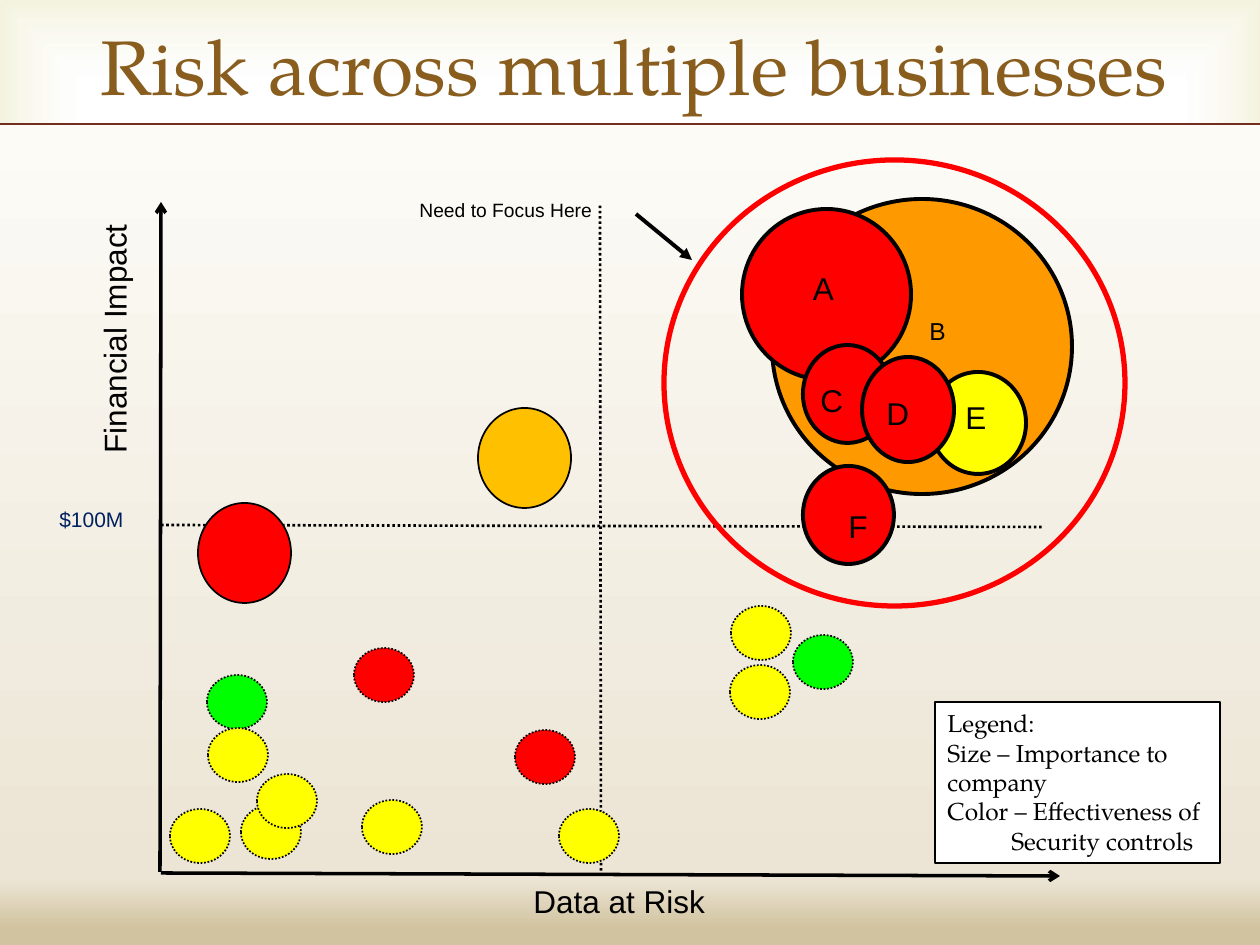
from lxml import etree
from pptx import Presentation
from pptx.dml.color import RGBColor
from pptx.enum.dml import MSO_LINE
from pptx.enum.shapes import MSO_CONNECTOR, MSO_SHAPE
from pptx.enum.text import MSO_ANCHOR, PP_ALIGN
from pptx.oxml import parse_xml
from pptx.oxml.ns import nsdecls, qn
from pptx.util import Pt

STRAIGHT = MSO_CONNECTOR.STRAIGHT
OVAL, RECTANGLE = MSO_SHAPE.OVAL, MSO_SHAPE.RECTANGLE
DOTTED = MSO_LINE.ROUND_DOT
LEFT, CENTER = PP_ALIGN.LEFT, PP_ALIGN.CENTER
TOP, MIDDLE = MSO_ANCHOR.TOP, MSO_ANCHOR.MIDDLE

EMU_PER_PX = 914400 / 126
SERIF, SANS = "TeX Gyre Pagella", "Arial"

BLACK = RGBColor(0x00, 0x00, 0x00)
WHITE = RGBColor(0xFF, 0xFF, 0xFF)
RED = RGBColor(0xFF, 0x00, 0x00)
ORANGE = RGBColor(0xFF, 0x99, 0x00)
AMBER = RGBColor(0xFF, 0xC0, 0x00)
YELLOW = RGBColor(0xFF, 0xFF, 0x00)
GREEN = RGBColor(0x00, 0xFF, 0x00)
NAVY = RGBColor(0x00, 0x20, 0x60)
BROWN = RGBColor(0x89, 0x5D, 0x1D)
RUST = RGBColor(0x74, 0x2E, 0x1F)
CREAM = RGBColor(0xFC, 0xFB, 0xF6)
SAND = RGBColor(0xEC, 0xE5, 0xD5)
TAN = RGBColor(0xD1, 0xC3, 0x9F)
OLIVE = RGBColor(0xD1, 0xCA, 0x75)

# Left, top, width, height, colour; from back to front
FOCUS_BUBBLES = [
    (772, 199, 300, 295, ORANGE),
    (930, 372, 96, 102, YELLOW),
    (742, 209, 169, 171, RED),
    (803, 345, 89, 98, RED),
    (862, 357, 92, 105, RED),
    (803, 466, 91, 98, RED),
]
MEDIUM_SIZE, SMALL_SIZE = (93, 100), (60, 54)
MEDIUM_BUBBLES = [(198, 503, RED), (478, 408, AMBER)]
SMALL_BUBBLES = [
    (559, 809, YELLOW), (515, 730, RED), (170, 809, YELLOW),
    (207, 675, GREEN), (354, 648, RED), (241, 805, YELLOW),
    (208, 728, YELLOW), (257, 774, YELLOW), (793, 635, GREEN),
    (730, 665, YELLOW), (731, 606, YELLOW), (362, 800, YELLOW),
]
# Text, left, top, width, height, size, alignment
BUBBLE_LABELS = [
    ("A", 753, 263, 141, 50, 18, CENTER),
    ("B", 917, 310, 193, 43, 14, LEFT),
    ("C", 808, 375, 66, 50, 18, LEFT),
    ("D", 874, 388, 66, 50, 18, LEFT),
    ("E", 953, 392, 77, 50, 18, LEFT),
    ("F", 805, 501, 106, 50, 18, CENTER),
]


def px(*lengths):
    return [round(length * EMU_PER_PX) for length in lengths]


def format_text(frame, size, font=SANS, color=BLACK, align=LEFT, anchor=TOP):
    frame.word_wrap = True
    frame.vertical_anchor = anchor
    for para in frame.paragraphs:
        para.alignment = align
        for span in para.runs:
            span.font.name = font
            span.font.size = Pt(size)
            span.font.color.rgb = color


def add_label(page, text, left, top, width, height, size,
              align=LEFT, color=BLACK):
    box = page.shapes.add_textbox(*px(left, top, width, height))
    box.text_frame.text = text
    format_text(box.text_frame, size, color=color, align=align)
    return box


def add_figure(page, kind, left, top, width, height, fill=None,
               outline=None, weight=1, dash=None):
    shape = page.shapes.add_shape(kind, *px(left, top, width, height))
    shape.shadow.inherit = False
    if fill is None:
        shape.fill.background()
    else:
        shape.fill.solid()
        shape.fill.fore_color.rgb = fill
    if outline is None:
        shape.line.fill.background()
    else:
        shape.line.color.rgb = outline
        shape.line.width = Pt(weight)
        shape.line.dash_style = dash
    return shape


def add_line(page, start, end, color, weight, dash=None, head=None):
    line = page.shapes.add_connector(STRAIGHT, *px(*start, *end))
    line.line.color.rgb = color
    line.line.width = Pt(weight)
    line.line.dash_style = dash
    if head:
        outline = line.line._get_or_add_ln()
        etree.SubElement(outline, qn("a:tailEnd"), type=head)
    etree.SubElement(line.element.spPr, qn("a:effectLst"))


def set_gradient(shape, stops, direction):
    """Give a shape a gradient; stops are (percent, colour, opacity)."""
    stop_xml = "".join(
        f'<a:gs pos="{place * 1000}"><a:srgbClr val="{color}">'
        f'<a:alpha val="{opacity * 1000}"/></a:srgbClr></a:gs>'
        for place, color, opacity in stops)
    gradient = parse_xml(
        f'<a:gradFill {nsdecls("a")} rotWithShape="1">'
        f'<a:gsLst>{stop_xml}</a:gsLst>{direction}</a:gradFill>')
    properties = shape.element.spPr
    properties.replace(properties.find(qn("a:noFill")), gradient)


def add_background(page):
    glow = add_figure(page, RECTANGLE, 0, 0, 1260, 945)
    set_gradient(glow, [(83, WHITE, 11), (100, OLIVE, 23)],
                 '<a:path path="rect"><a:fillToRect l="50000" t="50000" '
                 'r="50000" b="50000"/></a:path>')
    body = add_figure(page, RECTANGLE, 0, 124, 1260, 821)
    set_gradient(body, [(0, CREAM, 100), (92, SAND, 100), (98, TAN, 100)],
                 '<a:lin ang="5400000" scaled="0"/>')
    add_line(page, (0, 124), (1260, 124), RUST, 1)


def place_title(page, text):
    title = page.shapes.title
    page.shapes.element.append(title.element)  # in front of the background
    title.left, title.top, title.width, title.height = px(44, 15, 1181, 100)
    title.text_frame.text = text
    format_text(title.text_frame, 44, SERIF, BROWN, CENTER, MIDDLE)


def add_axes(page):
    add_line(page, (160, 872), (161, 202), BLACK, 2, head="arrow")
    add_line(page, (161, 873), (1060, 876), BLACK, 2, head="arrow")
    add_line(page, (601, 876), (600, 203), BLACK, 1.5, DOTTED)
    add_line(page, (161, 525), (1042, 527), BLACK, 1.5, DOTTED)
    impact = add_label(page, "Financial Impact", 89, 209, 63, 257, 18)
    impact.text_frame._txBody.bodyPr.set("vert", "vert270")
    add_label(page, "Data at Risk", 521, 876, 211, 50, 18)
    add_label(page, "$100M", 47, 500, 123, 45, 12, color=NAVY)


def add_bubbles(page):
    for *place, color in FOCUS_BUBBLES:
        add_figure(page, OVAL, *place, color, BLACK, 2.25)
    for left, top, color in SMALL_BUBBLES:
        add_figure(page, OVAL, left, top, *SMALL_SIZE, color, BLACK, 1, DOTTED)
    for left, top, color in MEDIUM_BUBBLES:
        add_figure(page, OVAL, left, top, *MEDIUM_SIZE, color, BLACK)
    for label in BUBBLE_LABELS:
        add_label(page, *label)


def add_focus(page):
    add_figure(page, OVAL, 664, 160, 461, 446, None, RED, 3)
    add_label(page, "Need to Focus Here", 407, 192, 364, 35, 11)
    add_line(page, (636, 214), (692, 260), BLACK, 2.25, head="triangle")


def add_legend(page):
    legend = add_figure(page, RECTANGLE, 935, 702, 285, 161,
                        WHITE, BLACK, 1.5)
    frame = legend.text_frame
    frame.text = ("Legend:\nSize – Importance to company\n"
                  "Color – Effectiveness of Security controls")
    hanging, = px(64)
    indent = frame.paragraphs[-1]._p.get_or_add_pPr()
    indent.set("marL", str(hanging))
    indent.set("indent", str(-hanging))
    format_text(frame, 14, SERIF)


def main():
    deck = Presentation()
    deck.slide_width, deck.slide_height = px(1260, 945)
    page = deck.slides.add_slide(deck.slide_layouts[5])
    add_background(page)
    place_title(page, "Risk across multiple businesses")
    add_axes(page)
    add_bubbles(page)
    add_focus(page)
    add_legend(page)
    deck.save("out.pptx")


if __name__ == "__main__":
    main()
